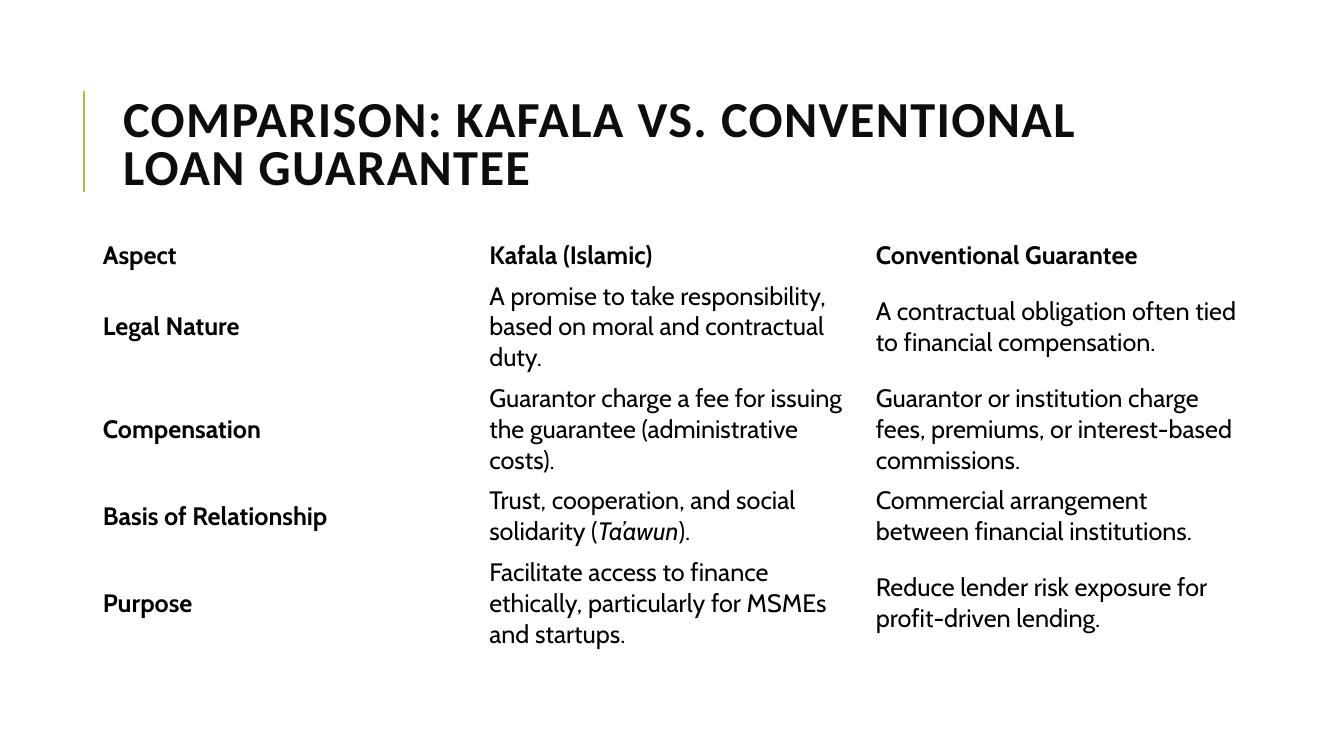
from lxml import etree
from pptx import Presentation
from pptx import util as u
from pptx.dml.color import RGBColor
from pptx.enum import shapes, text
from pptx.oxml.ns import qn

BLACK = RGBColor(0x00, 0x00, 0x00)
TITLE_INK = RGBColor(0x0D, 0x0D, 0x0D)
GREEN = RGBColor(0x99, 0xCB, 0x38)

COMPARISON = [
    ("Aspect", "Kafala (Islamic)", "Conventional Guarantee"),
    ("Legal Nature",
     "A promise to take responsibility, based on moral and contractual duty.",
     "A contractual obligation often tied to financial compensation."),
    ("Compensation",
     "Guarantor charge a fee for issuing the guarantee (administrative costs).",
     "Guarantor or institution charge fees, premiums, or interest-based commissions."),
    ("Basis of Relationship",
     "Trust, cooperation, and social solidarity (*Ta’awun*).",
     "Commercial arrangement between financial institutions."),
    ("Purpose",
     "Facilitate access to finance ethically, particularly for MSMEs and startups.",
     "Reduce lender risk exposure for profit-driven lending."),
]
ROW_HEIGHTS = [0.4, 1, 1, 0.7, 1]


class SlideBuilder:
    title_font = "Calibri"
    body_font = "Cabin"

    def __init__(self, presentation):
        self.slide = presentation.slides.add_slide(presentation.slide_layouts[5])

    def format_font(self, font, name, size, color, bold):
        font.name = name
        font.size = u.Pt(size)
        font.color.rgb = color
        font.bold = bold

    def accent_line(self, x, top, bottom):
        line = self.slide.shapes.add_connector(
            shapes.MSO_CONNECTOR.STRAIGHT,
            u.Inches(x), u.Inches(bottom), u.Inches(x), u.Inches(top))
        line.line.color.rgb = GREEN
        line.line.width = u.Pt(1.5)
        etree.SubElement(line._element.spPr, qn("a:effectLst"))

    def title(self, wording, left, top, width, height):
        title = self.slide.shapes.title
        title.left, title.top = u.Inches(left), u.Inches(top)
        title.width, title.height = u.Inches(width), u.Inches(height)
        frame = title.text_frame
        frame.text = wording
        frame.word_wrap = True
        frame.auto_size = text.MSO_AUTO_SIZE.NONE
        frame.vertical_anchor = text.MSO_ANCHOR.MIDDLE
        paragraph = frame.paragraphs[0]
        paragraph.alignment = text.PP_ALIGN.LEFT
        paragraph.line_spacing = 0.8
        self.format_font(paragraph.font, self.title_font, 36, TITLE_INK, True)
        paragraph.runs[0].font._element.set("spc", "100")

    def table(self, rows, row_heights, left, top, width):
        table = self.slide.shapes.add_table(
            len(rows), len(rows[0]), u.Inches(left), u.Inches(top),
            u.Inches(width), u.Inches(sum(row_heights))).table
        table.first_row = False
        table.horz_banding = False
        for row_index, wordings in enumerate(rows):
            table.rows[row_index].height = u.Inches(row_heights[row_index])
            for column_index, wording in enumerate(wordings):
                heading = row_index == 0 or column_index == 0
                self.fill_cell(table.cell(row_index, column_index), wording, heading)

    def fill_cell(self, cell, wording, bold):
        cell.fill.background()
        cell.vertical_anchor = text.MSO_ANCHOR.MIDDLE
        paragraph = cell.text_frame.paragraphs[0]
        self.format_font(paragraph.font, self.body_font, 18, BLACK, bold)
        for index, part in enumerate(wording.split("*")):
            run = paragraph.add_run()
            run.text = part
            if index % 2:
                run.font.italic = True


def main():
    presentation = Presentation()
    presentation.slide_width = u.Inches(13.33)
    presentation.slide_height = u.Inches(7.5)
    builder = SlideBuilder(presentation)
    builder.accent_line(0.83, 0.9, 1.9)
    builder.title("COMPARISON: KAFALA VS. CONVENTIONAL LOAN GUARANTEE",
                  1.12, 0.64, 10.63, 1.64)
    builder.table(COMPARISON, ROW_HEIGHTS, 0.92, 2.33, 11.5)
    presentation.save("out.pptx")


if __name__ == "__main__":
    main()
